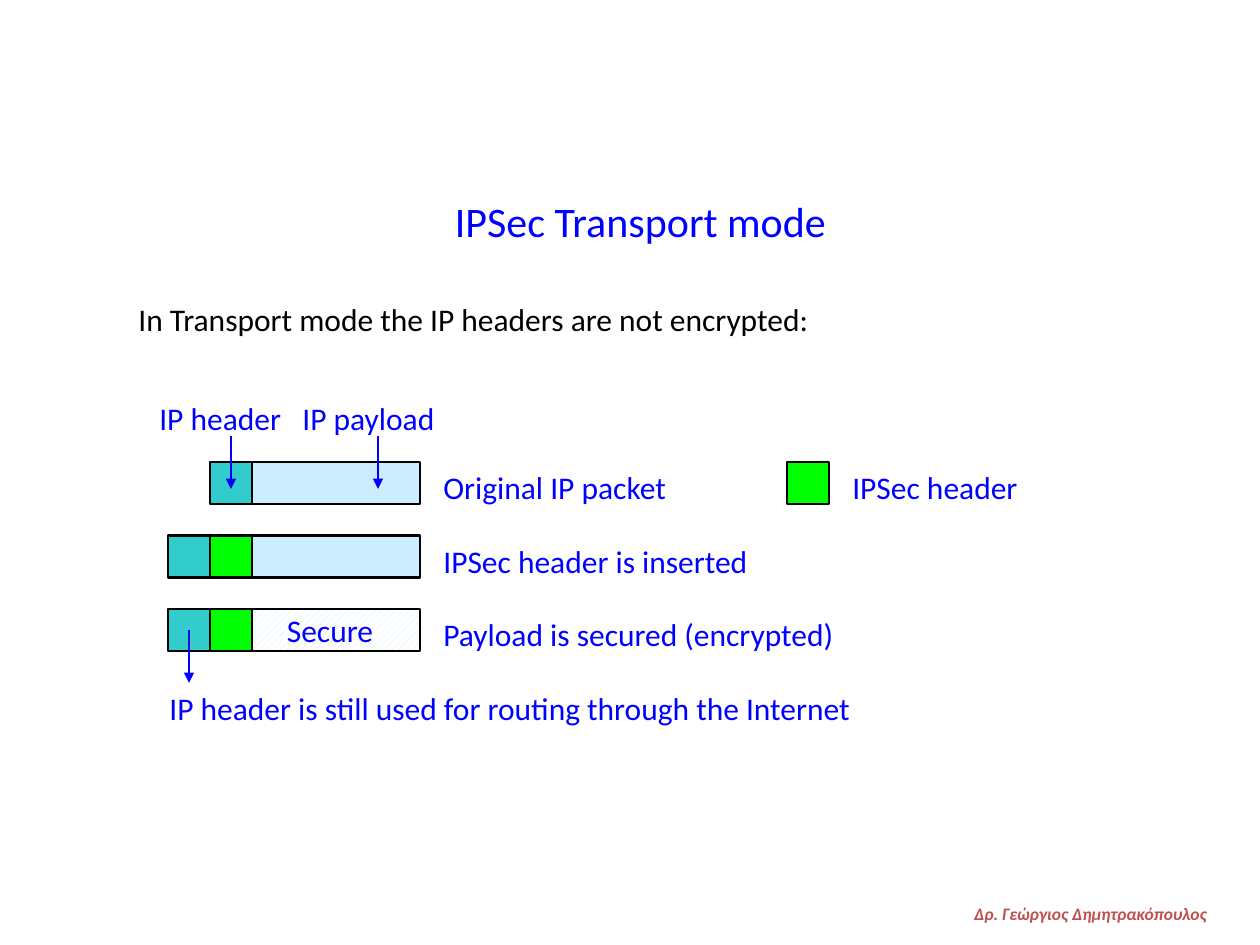
import pptx
import pptx.util
import pptx.dml.color
import pptx.enum.dml
import pptx.enum.shapes
import pptx.enum.text
import pptx.oxml.ns
import lxml.etree

SCALE = 914400 / 126
CELL = 42
COLORS = {
    "ink": "0000FF",
    "text": "000000",
    "head": "33CCCC",
    "sec": "00FF00",
    "load": "CCECFF",
    "back": "FFFFFF",
    "name": "C0504D",
}
ALIGN = pptx.enum.text.PP_ALIGN


def px(*nums):
    return [pptx.util.Emu(round(num * SCALE)) for num in nums]


def color(key):
    return pptx.dml.color.RGBColor.from_string(COLORS[key])


def style(box, text, size, key, align):
    frame = box.text_frame
    frame.word_wrap = True
    frame.vertical_anchor = pptx.enum.text.MSO_ANCHOR.TOP
    frame.text = text
    para = frame.paragraphs[0]
    para.alignment = align
    para.font.name = "Calibri"
    para.font.size = pptx.util.Pt(size)
    para.font.color.rgb = color(key)
    return para


def label(slide, text, left, top, width, size=18, key="ink", align=ALIGN.LEFT):
    box = slide.shapes.add_textbox(*px(left, top, width, 50))
    return style(box, text, size, key, align)


def heading(slide, text):
    title = slide.shapes.title
    title.left, title.top, title.width, title.height = px(210, 189, 861, 63)
    style(title, text, 24, "ink", ALIGN.CENTER)


def block(slide, left, top, key, cells=1):
    kind = pptx.enum.shapes.MSO_SHAPE.RECTANGLE
    rect = slide.shapes.add_shape(kind, *px(left, top, cells * CELL, CELL))
    rect.shadow.inherit = False
    rect.fill.solid()
    rect.fill.fore_color.rgb = color(key)
    rect.line.color.rgb = color("text")
    rect.line.width = pptx.util.Pt(1.5)
    return rect


def hatch(rect):
    rect.fill.patterned()
    rect.fill.pattern = pptx.enum.dml.MSO_PATTERN.WIDE_UPWARD_DIAGONAL
    rect.fill.fore_color.rgb = color("load")
    rect.fill.back_color.rgb = color("back")


def packet(slide, top, heads, text):
    load = block(slide, 252, top, "load", 4)
    for step, key in enumerate(heads, 1):
        block(slide, 252 - step * CELL, top, key)
    label(slide, text, 431, top, 600)
    return load


def arrow(slide, left, top):
    kind = pptx.enum.shapes.MSO_CONNECTOR.STRAIGHT
    line = slide.shapes.add_connector(kind, *px(left, top, left, top + 53))
    line.line.color.rgb = color("ink")
    line.line.width = pptx.util.Pt(1.5)
    qn = pptx.oxml.ns.qn
    tail = lxml.etree.SubElement(line.line._get_or_add_ln(), qn("a:tailEnd"))
    tail.set("type", "triangle")
    lxml.etree.SubElement(line._element.spPr, qn("a:effectLst"))


def main():
    deck = pptx.Presentation()
    deck.slide_width, deck.slide_height = px(1260, 945)
    slide = deck.slides.add_slide(deck.slide_layouts[5])
    heading(slide, "IPSec Transport mode")
    label(slide, "In Transport mode the IP headers are not encrypted:",
          126, 294, 1029, key="text")

    rows = [
        (["head"], "Original IP packet"),
        (["sec", "head"], "IPSec header is inserted"),
        (["sec", "head"], "Payload is secured (encrypted)"),
    ]
    for index, (heads, text) in enumerate(rows):
        load = packet(slide, 462 + index * 73.5, heads, text)
    hatch(load)
    label(slide, "Secure", 262, 605, 136, align=ALIGN.CENTER)

    block(slide, 787, 462, "sec")
    label(slide, "IPSec header", 840, 462, 252)
    label(slide, "IP header", 147, 393, 150)
    label(slide, "IP payload", 290, 393, 160)
    label(slide, "IP header is still used for routing through the Internet",
          157, 683, 903)
    for left, top in [(231, 436), (378, 436), (189, 630)]:
        arrow(slide, left, top)

    name = label(slide, "Δρ. Γεώργιος Δημητρακόπουλος", 820, 897, 399,
                 10, "name", ALIGN.RIGHT)
    name.font.bold = True
    name.font.italic = True
    deck.save("out.pptx")


if __name__ == "__main__":
    main()
